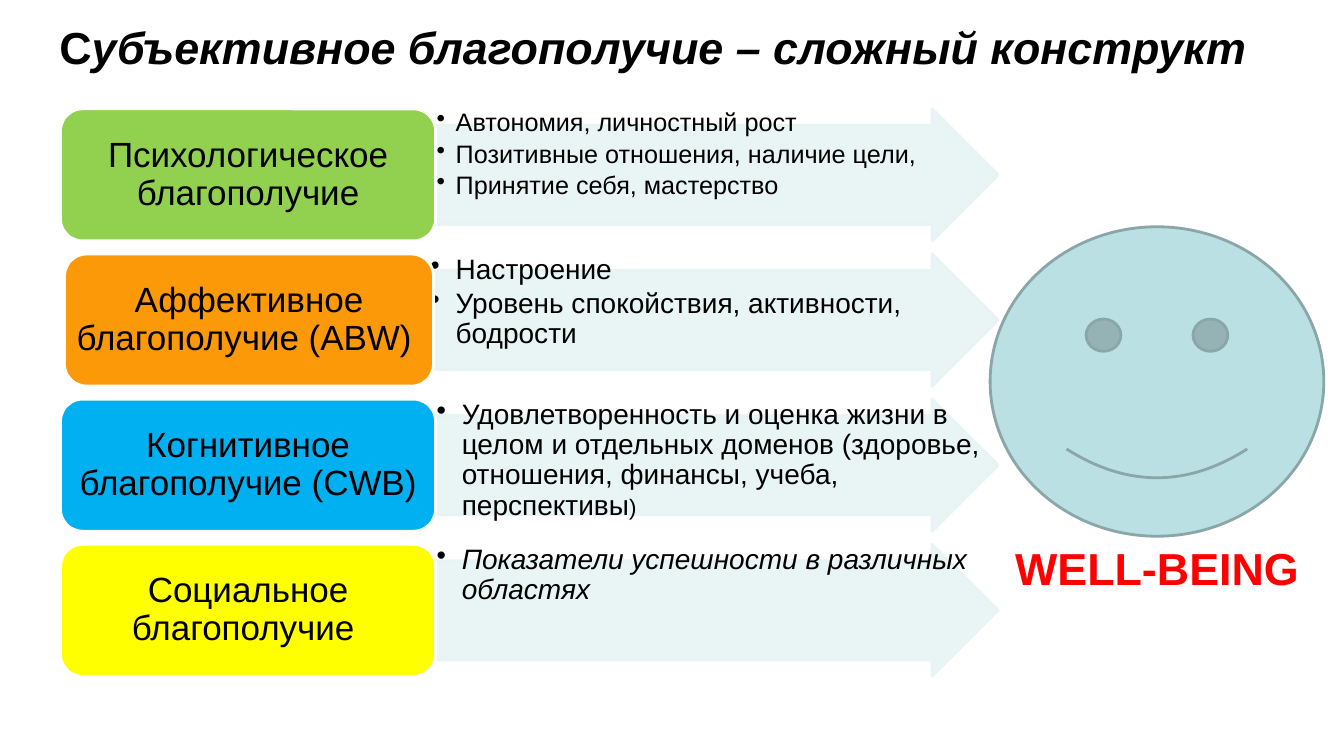
import pptx
import pptx.util
import pptx.dml.color
import pptx.enum.shapes
import pptx.enum.text
import pptx.oxml
import pptx.oxml.ns

Inches = pptx.util.Inches
Pt = pptx.util.Pt
Kind = pptx.enum.shapes.MSO_SHAPE
Align = pptx.enum.text.PP_ALIGN
Anchor = pptx.enum.text.MSO_ANCHOR
qn = pptx.oxml.ns.qn


def paint(shape, fill, line, alpha=None):
    shape.shadow.inherit = False
    shape.fill.solid()
    shape.line.width = Pt(2)
    shape.line.fill.solid()
    for part, tone in ((shape.fill, fill), (shape.line.fill, line)):
        part.fore_color.rgb = pptx.dml.color.RGBColor.from_string(tone)
    if alpha:
        for node in shape.element.spPr.iter(qn("a:srgbClr")):
            node.append(pptx.oxml.parse_xml(
                '<a:alpha xmlns:a="http://schemas.openxmlformats.org/drawingml/2006/main"'
                f' val="{alpha * 1000}"/>'))


def write(shape, paras, size, color="000000", bold=False, italic=False,
          align=Align.LEFT, anchor=Anchor.TOP, inset=(0.1, 0.05),
          space=None, after=0, indent=0):
    frame = shape.text_frame
    frame.word_wrap = True
    frame.vertical_anchor = anchor
    frame.margin_left = frame.margin_right = Inches(inset[0])
    frame.margin_top = frame.margin_bottom = Inches(inset[1])
    for i, runs in enumerate(paras):
        para = frame.add_paragraph() if i else frame.paragraphs[0]
        para.alignment = align
        para.line_spacing = space
        para.space_after = Pt(after)
        if indent:
            props = para._p.get_or_add_pPr()
            props.set("marL", str(Inches(indent)))
            props.set("indent", str(-Inches(indent)))
            pptx.oxml.ns
            dot = props.makeelement(qn("a:buChar"), {"char": "•"})
            props.append(dot)
        for words, style in runs:
            run = para.add_run()
            run.text = words
            font = run.font
            font.name = "Arial"
            font.size = Pt(style.get("size", size))
            font.bold = bold
            font.italic = style.get("italic", italic)
            font.color.rgb = pptx.dml.color.RGBColor.from_string(color)


deck = pptx.Presentation()
deck.slide_width = Inches(13.33)
deck.slide_height = Inches(7.5)
shapes = deck.slides.add_slide(deck.slide_layouts[6]).shapes

title = shapes.add_textbox(Inches(0.29), 0, Inches(12.38), Inches(0.92))
write(title, [[("С", {}), ("убъективное благополучие – сложный конструкт", {"italic": True})]],
      32, bold=True, align=Align.CENTER, anchor=Anchor.MIDDLE)

rows = [
    ("Психологическое благополучие", "92D050", 0.6, 3.72, 4.32, 18, 0.19, False,
     [[("Автономия, личностный рост", {})],
      [("Позитивные отношения, наличие цели,", {})],
      [("Принятие себя, мастерство", {})]]),
    ("Аффективное благополучие (ABW) ", "FC9908", 0.64, 3.66, 4.26, 20, 0.25, False,
     [[("Настроение", {})],
      [("Уровень спокойствия, активности, бодрости", {})]]),
    ("Когнитивное благополучие (CWB)", "00B0F0", 0.6, 3.72, 4.32, 20, 0.25, False,
     [[("Удовлетворенность и оценка жизни в целом и отдельных доменов "
        "(здоровье, отношения, финансы, учеба, перспективы", {}), (")", {"size": 16})]]),
    ("Социальное благополучие ", "FFFF00", 0.6, 3.72, 4.32, 20, 0.25, True,
     [[("Показатели успешности в различных областях", {})]]),
]
right = 9.9
high = Inches(1.31)

for i, (label, tone, left, wide, start, size, indent, slant, points) in enumerate(rows):
    top = Inches(1.08 + 1.44 * i)
    area = (Inches(start), top, Inches(right - start), high)
    arrow = shapes.add_shape(Kind.RIGHT_ARROW, *area)
    arrow.adjustments[0] = 0.75
    arrow.adjustments[1] = 0.5
    paint(arrow, "E7F3F4", "E7F3F4", alpha=90)
    write(shapes.add_textbox(*area), points, size, italic=slant, inset=(0.01, 0.01),
          space=0.9, after=3, indent=indent)
    pill = shapes.add_shape(Kind.ROUNDED_RECTANGLE, Inches(left), top, Inches(wide), high)
    paint(pill, tone, "FFFFFF")
    write(pill, [[(label, {})]], 25, align=Align.CENTER, anchor=Anchor.MIDDLE,
          inset=(0.04, 0), space=0.9)

smile = shapes.add_shape(Kind.SMILEY_FACE, Inches(9.82), Inches(2.25), Inches(3.31), Inches(3.07))
paint(smile, "BBE0E3", "8AA6A8")
goal = shapes.add_textbox(Inches(9.97), Inches(5.32), Inches(3.36), Inches(0.64))
write(goal, [[("WELL-BEING", {})]], 32, color="FF0000", bold=True)

deck.save("out.pptx")
